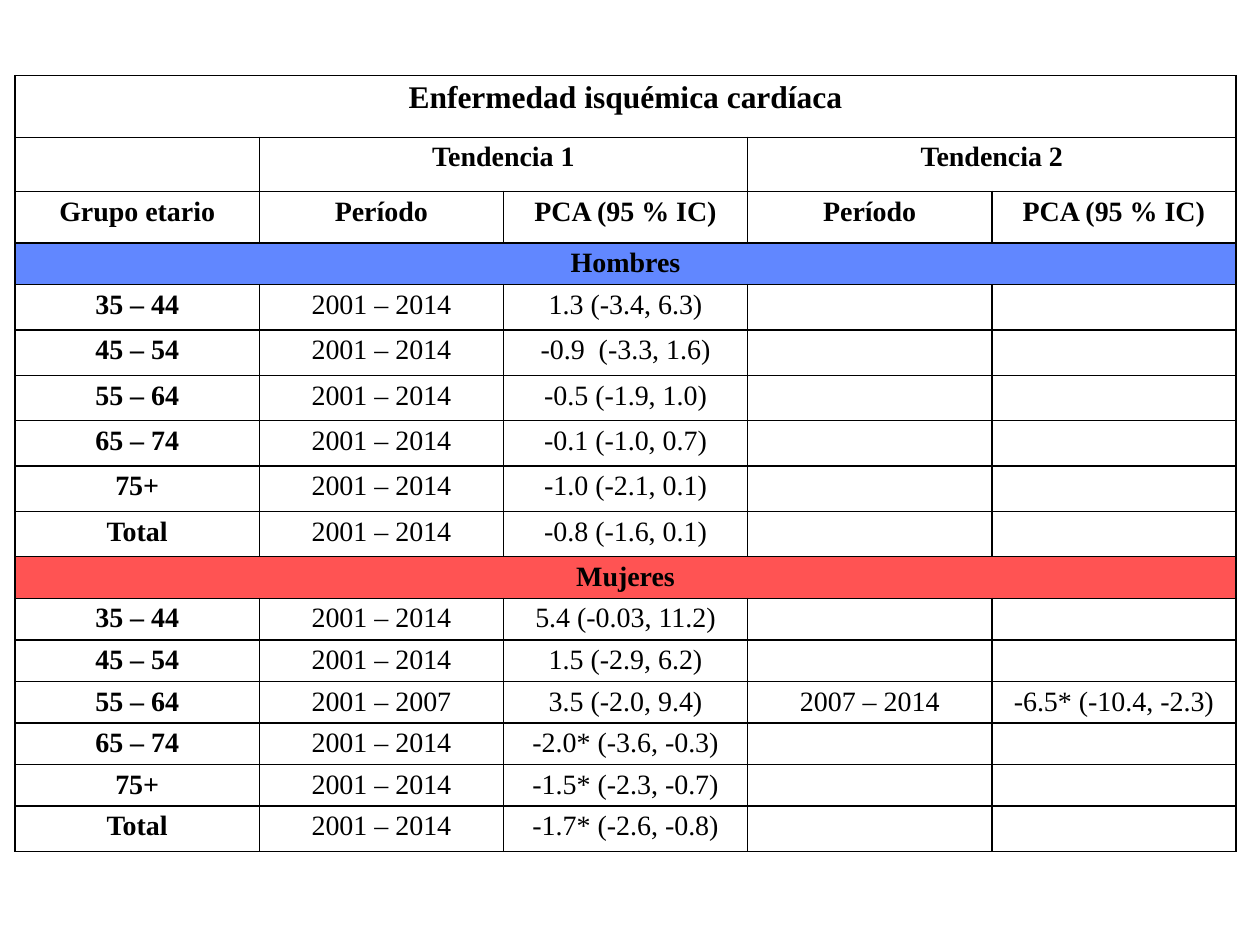
from pptx import Presentation
from pptx.dml.color import RGBColor
from pptx.enum.text import PP_ALIGN
from pptx.oxml.ns import qn
from pptx.util import Inches, Pt
from lxml.etree import SubElement

COLORS = {"ink": "000000", "men": "6187FF", "women": "FF5353"}
FONT = "Times New Roman"
COLS = 5
HEIGHTS = [0.49, 0.43, 0.41, 0.33] + [0.36] * 6 + [0.33] * 6 + [0.36] * 2
AGES = ["35 – 44", "45 – 54", "55 – 64", "65 – 74", "75+", "Total"]
SPAN = "2001 – 2014"
MEN = ["1.3 (-3.4, 6.3)", "-0.9  (-3.3, 1.6)", "-0.5 (-1.9, 1.0)",
       "-0.1 (-1.0, 0.7)", "-1.0 (-2.1, 0.1)", "-0.8 (-1.6, 0.1)"]
WOMEN = ["5.4 (-0.03, 11.2)", "1.5 (-2.9, 6.2)", "3.5 (-2.0, 9.4)",
         "-2.0* (-3.6, -0.3)", "-1.5* (-2.3, -0.7)", "-1.7* (-2.6, -0.8)"]


def group(values):
    return [[age, SPAN, value, "", ""] for age, value in zip(AGES, values)]


def get_rows():
    women = group(WOMEN)
    # The only age group with a second trend
    women[2] = ["55 – 64", "2001 – 2007", WOMEN[2],
                "2007 – 2014", "-6.5* (-10.4, -2.3)"]
    return [
        ["Enfermedad isquémica cardíaca"] + [""] * 4,
        ["", "Tendencia 1", "", "Tendencia 2", ""],
        ["Grupo etario"] + ["Período", "PCA (95 % IC)"] * 2,
        ["Hombres"] + [""] * 4,
        *group(MEN),
        ["Mujeres"] + [""] * 4,
        *women,
    ]


def add_borders(cell):
    props = cell._tc.get_or_add_tcPr()
    for side in ("lnL", "lnR", "lnT", "lnB"):
        line = SubElement(props, qn(f"a:{side}"), w=str(Pt(1)))
        fill = SubElement(line, qn("a:solidFill"))
        SubElement(fill, qn("a:srgbClr"), val=COLORS["ink"])


def style_cell(cell, color=None):
    cell.margin_left = cell.margin_right = Inches(0.07)
    cell.margin_top = cell.margin_bottom = 0
    add_borders(cell)
    if color:
        cell.fill.solid()
        cell.fill.fore_color.rgb = RGBColor.from_string(COLORS[color])
    else:
        cell.fill.background()


def write_cell(cell, text, size, bold):
    para = cell.text_frame.paragraphs[0]
    para.alignment = PP_ALIGN.CENTER
    para.line_spacing = 1.15
    para.space_after = Pt(10)
    if not text:
        # Keeps empty cells from stretching their row
        SubElement(para._p, qn("a:endParaRPr"), sz=str(size * 100))
        return
    run = para.add_run()
    run.text = text
    font = run.font
    font.name, font.size, font.bold = FONT, Pt(size), bold
    font.color.rgb = RGBColor.from_string(COLORS["ink"])


def add_grid(slide, rows):
    frame = slide.shapes.add_table(len(rows), COLS, Inches(0.12), Inches(0.6),
                                   Inches(9.69), Inches(sum(HEIGHTS)))
    table = frame.table
    table.first_row = table.horz_banding = False
    for col in table.columns:
        col.width = Inches(9.69 / COLS)
    for row, height in zip(table.rows, HEIGHTS):
        row.height = Inches(height)

    # Cell text and fills
    bands = {3: "men", 10: "women"}
    for r, row in enumerate(rows):
        for c, text in enumerate(row):
            cell = table.cell(r, c)
            style_cell(cell, bands.get(r))
            bold = c == 0 or r < 3
            write_cell(cell, text, 18 if r == 0 and text else 16, bold)

    # Merged headings: row, first column, last column
    for r, start, end in [(0, 0, 4), (1, 1, 2), (1, 3, 4), (3, 0, 4), (10, 0, 4)]:
        table.cell(r, start).merge(table.cell(r, end))


def main():
    deck = Presentation()
    deck.slide_width, deck.slide_height = Inches(10), Inches(7.5)
    slide = deck.slides.add_slide(deck.slide_layouts[6])
    add_grid(slide, get_rows())
    deck.save("out.pptx")


if __name__ == "__main__":
    main()
